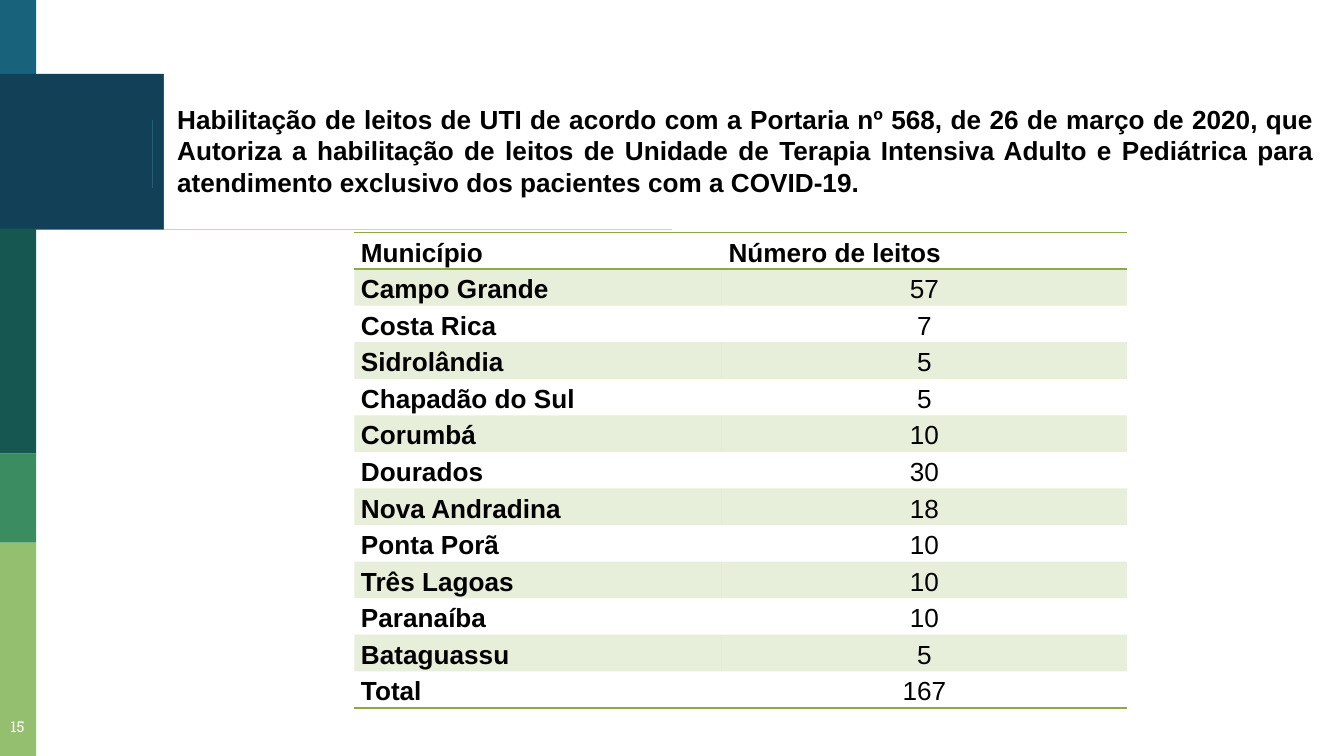
from lxml import etree
from pptx import Presentation
from pptx import util as u
from pptx.dml import color
from pptx.enum import shapes, text
from pptx.oxml import ns

WIDTH = 10
HEIGHT = WIDTH * 9 / 16
GREEN = "8BAB42"
ALIGN = text.PP_ALIGN
BEDS = [
    ("Campo Grande", 57), ("Costa Rica", 7), ("Sidrolândia", 5),
    ("Chapadão do Sul", 5), ("Corumbá", 10), ("Dourados", 30),
    ("Nova Andradina", 18), ("Ponta Porã", 10), ("Três Lagoas", 10),
    ("Paranaíba", 10), ("Bataguassu", 5), ("Total", 167),
]
LEFT_ALIGNED = ("Chapadão do Sul", "Corumbá", "Dourados")
TITLE = (
    "Habilitação de leitos de UTI de acordo com a Portaria nº 568, de 26 de março de 2020, "
    "que Autoriza a habilitação de leitos de Unidade de Terapia Intensiva Adulto e Pediátrica "
    "para atendimento exclusivo dos pacientes com a COVID-19."
)


def rgb(value):
    """Turn a hex string into a colour."""
    return color.RGBColor.from_string(value)


def across(percent):
    """Give a percentage of the slide's width."""
    return u.Inches(WIDTH * percent / 100)


def down(percent):
    """Give a percentage of the slide's height."""
    return u.Inches(HEIGHT * percent / 100)


def place(left, top, width, height):
    """Turn four percentages into a position and a size."""
    return across(left), down(top), across(width), down(height)


def assign(target, values):
    """Set each attribute named in a dict."""
    for name, value in values.items():
        setattr(target, name, value)


def write(frame, words, align, ink="000000", spacing=None, **font):
    """Write one formatted paragraph into a text frame."""
    para = frame.paragraphs[0]
    assign(para, {"alignment": align, "line_spacing": spacing})
    span = para.add_run()
    span.text = words
    assign(span.font, {"name": "Arial", "size": u.Pt(14), **font})
    span.font.color.rgb = rgb(ink)


def add_block(page, area, fill):
    """Add a plain filled rectangle."""
    block = page.shapes.add_shape(shapes.MSO_SHAPE.RECTANGLE, *place(*area))
    block.shadow.inherit = False
    block.fill.solid()
    block.fill.fore_color.rgb = rgb(fill)
    block.line.fill.background()
    return block


def add_rule(page, left, top, bottom):
    """Add a thin vertical line without a shadow."""
    rule = page.shapes.add_connector(
        shapes.MSO_CONNECTOR.STRAIGHT, across(left), down(top), across(left), down(bottom))
    rule.line.color.rgb = rgb("18637B")
    rule.line.width = u.Pt(0.75)
    etree.SubElement(rule._element.spPr, ns.qn("a:effectLst"))


def set_margins(frame, anchor):
    """Give a text frame wrapping, an anchor and even margins."""
    margins = {f"margin_{side}": u.Inches(0.1) for side in ("left", "top", "right", "bottom")}
    assign(frame, {"word_wrap": True, "vertical_anchor": anchor, **margins})


def add_border(cell, side):
    """Draw a green border on one side of a cell."""
    border = etree.Element(ns.qn(f"a:{side}"), w=str(u.Pt(1)))
    fill = etree.SubElement(border, ns.qn("a:solidFill"))
    etree.SubElement(fill, ns.qn("a:srgbClr"), val=GREEN)
    cell._tc.get_or_add_tcPr().insert(0, border)


def fill_cell(cell, banded):
    """Give a cell a translucent green band or no fill."""
    if not banded:
        cell.fill.background()
        return
    cell.fill.solid()
    cell.fill.fore_color.rgb = rgb(GREEN)
    tint = cell._tc.tcPr.find(".//" + ns.qn("a:srgbClr"))
    etree.SubElement(tint, ns.qn("a:alpha"), val="20000")


def add_beds_table(page):
    """Add the table of beds by municipality."""
    rows = [("Município", "Número de leitos"), *BEDS]
    last = len(rows) - 1
    table = page.shapes.add_table(len(rows), 2, *place(26.36, 30.76, 57.5, 62.93)).table
    assign(table, {"first_row": False, "horz_banding": False})
    style = table._tbl.tblPr.find(ns.qn("a:tableStyleId"))
    style.text = "{2D5ABB26-0587-4C30-8999-92F81FD0307C}"
    for column, width in zip(table.columns, (27.35, 30.15)):
        column.width = across(width)
    for r, values in enumerate(rows):
        for c, value in enumerate(values):
            cell = table.cell(r, c)
            assign(cell, {
                "margin_left": u.Inches(0.05), "margin_right": u.Inches(0.05),
                "margin_top": 0, "margin_bottom": 0,
                "vertical_anchor": text.MSO_ANCHOR.MIDDLE,
            })
            is_count = r > 0 and c == 1
            label_align = ALIGN.LEFT if value in LEFT_ALIGNED else ALIGN.JUSTIFY
            write(cell.text_frame, str(value), ALIGN.CENTER if is_count else label_align,
                  spacing=1.15, bold=not is_count)
            fill_cell(cell, r % 2 == 1 and r < last)
            if r in (0, last):
                add_border(cell, "lnB")
            if r == 0:
                add_border(cell, "lnT")


def main():
    """Build the slide and save it."""
    deck = Presentation()
    assign(deck, {"slide_width": u.Inches(WIDTH), "slide_height": u.Inches(HEIGHT)})
    page = deck.slides.add_slide(deck.slide_layouts[6])

    add_block(page, (0, 0, 2.7, 10.31), "18637B")
    add_block(page, (0, 9.78, 50, 20.62), "124057")
    stops = (30.25, 60, 71.8, 100)
    for top, bottom, fill in zip(stops, stops[1:], ("165751", "3B8D61", "94BF6E")):
        add_block(page, (0, top, 2.7, bottom - top), fill)
    add_rule(page, 11.34, 15.82, 24.89)

    title = add_block(page, (12.2, 9.42, 86.6, 20.98), "FFFFFF")
    set_margins(title.text_frame, text.MSO_ANCHOR.MIDDLE)
    write(title.text_frame, TITLE, ALIGN.JUSTIFY, bold=True)

    number = page.shapes.add_textbox(*place(-0.6, 93.75, 3.8, 6.25))
    set_margins(number.text_frame, text.MSO_ANCHOR.TOP)
    write(number.text_frame, "15", ALIGN.CENTER, "FFFFFF", name="Roboto Slab", size=u.Pt(8))

    add_beds_table(page)
    deck.save("out.pptx")


if __name__ == "__main__":
    main()
